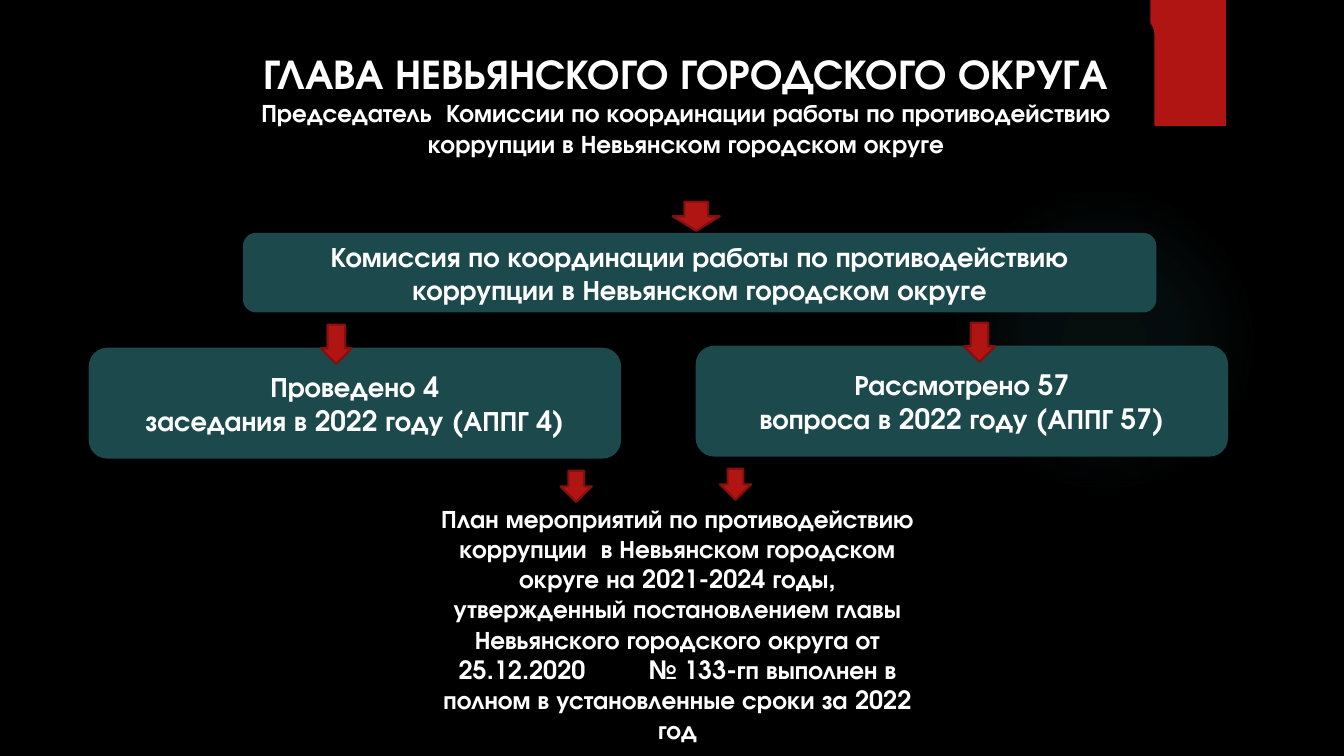
import pptx
import pptx.util
import pptx.dml.color
import pptx.enum.shapes
import pptx.enum.text
import pptx.oxml
import pptx.oxml.ns

Inches = pptx.util.Inches
Pt = pptx.util.Pt
Color = pptx.dml.color.RGBColor
KIND = pptx.enum.shapes.MSO_SHAPE

BLACK = Color(0x00, 0x00, 0x00)
WHITE = Color(0xFF, 0xFF, 0xFF)
TEAL = Color(0x1B, 0x49, 0x4C)
RED = Color(0xB0, 0x15, 0x13)
DARK = Color(0x82, 0x10, 0x0E)
GLOW = Color(0x50, 0xB9, 0xC1)
FONT = "TeX Gyre Adventor"


def add_form(slide, kind, box, fill, line=None):
    form = slide.shapes.add_shape(kind, *[Inches(n) for n in box])
    form.shadow.inherit = False
    form.fill.solid()
    form.fill.fore_color.rgb = fill
    if line is None:
        form.line.fill.background()
    else:
        form.line.color.rgb = line
        form.line.width = Pt(1.5)
    return form


def add_text(para, parts, size=20, color=WHITE, bold=True):
    """Text parts; a number stands for a space widened by that many points."""
    para.alignment = pptx.enum.text.PP_ALIGN.CENTER
    for part in parts:
        run = para.add_run()
        gap = not isinstance(part, str)
        run.text = " " if gap else part
        run.font.name = FONT
        run.font.size = Pt(size)
        run.font.bold = bold
        run.font.color.rgb = color
        if gap:
            run.font._element.set("spc", str(int(part * 100)))


def add_panel(slide, box, lines, fill=TEAL, sizes=(20, 20)):
    panel = add_form(slide, KIND.ROUNDED_RECTANGLE, box, fill)
    frame = panel.text_frame
    frame.word_wrap = True
    frame.vertical_anchor = pptx.enum.text.MSO_ANCHOR.MIDDLE
    for i, (parts, size) in enumerate(zip(lines, sizes)):
        para = frame.add_paragraph() if i else frame.paragraphs[0]
        add_text(para, parts, size=size)
    return panel


def add_glow(slide, box):
    glow = add_form(slide, KIND.OVAL, box, GLOW)
    stops = "".join(
        f'<a:gs pos="{pos}000"><a:srgbClr val="{GLOW}">'
        f'<a:alpha val="{alpha}000"/></a:srgbClr></a:gs>'
        for pos, alpha in ((0, 7), (36, 6), (69, 0)))
    grad = pptx.oxml.parse_xml(
        f'<a:gradFill {pptx.oxml.ns.nsdecls("a")}><a:gsLst>{stops}</a:gsLst>'
        '<a:path path="circle"><a:fillToRect l="50000" t="50000" '
        'r="50000" b="50000"/></a:path></a:gradFill>')
    props = glow._element.spPr
    props.replace(props.find(pptx.oxml.ns.qn("a:solidFill")), grad)


def add_arrow(slide, box):
    return add_form(slide, KIND.DOWN_ARROW, box, RED, DARK)


def add_decor(slide):
    add_glow(slide, (9.41, 1.83, 3.08, 3.08))
    add_form(slide, KIND.RECTANGLE, (11.41, 0, 0.75, 1.25), RED)


def add_head(slide, box):
    panel = add_panel(slide, box, [
        ["ГЛАВА НЕВЬЯНСКОГО ГОРОДСКОГО ОКРУГА"],
        ["Председатель", 5, "Комиссии по координации работы по "
         "противодействию коррупции в Невьянском городском округе"],
    ], fill=BLACK, sizes=(30, 18))
    panel.adjustments[0] = 0.11


def add_board(slide, box):
    left, top, width, height = box
    add_panel(slide, box, [[
        "Комиссия по координации работы по противодействию "
        "коррупции в Невьянском городском округе"]])
    add_arrow(slide, (left + 4.26, top - 0.31, 0.47, 0.29))


def add_result(slide, box, lines, shift):
    left, top, width, height = box
    add_panel(slide, box, [[line] for line in lines])
    arrow = add_arrow(slide, (left + shift, top - 0.23, 0.31, 0.39))
    arrow.adjustments[0] = 0.56


def add_plan(slide, box):
    left, top, width, height = box
    add_panel(slide, box, [[
        "План мероприятий по противодействию коррупции", 5,
        "в Невьянском городском округе на 2021-2024 годы, утвержденный "
        "постановлением главы Невьянского городского округа от 25.12.2020",
        40, "№ 133-гп выполнен в полном в установленные сроки за 2022 год"]],
        fill=BLACK, sizes=(18,))
    for shift, rise in ((1.42, 0.34), (3, 0.36)):
        add_arrow(slide, (left + shift, top - rise, 0.31, 0.31))


def main():
    deck = pptx.Presentation()
    deck.slide_width, deck.slide_height = Inches(13.33), Inches(7.5)
    slide = deck.slides.add_slide(deck.slide_layouts[6])
    slide.background.fill.solid()
    slide.background.fill.fore_color.rgb = BLACK

    # Backdrop and heading
    add_decor(slide)
    add_head(slide, (2.16, 0.16, 9.29, 1.72))

    # Commission and its results
    add_board(slide, (2.41, 2.31, 9.06, 0.79))
    add_result(slide, (0.88, 3.45, 5.28, 1.1),
               ("Проведено 4", "заседания в 2022 году (АППГ 4)"), 2.3)
    add_result(slide, (6.9, 3.43, 5.28, 1.1),
               ("Рассмотрено 57", "вопроса в 2022 году (АППГ 57)"), 2.66)

    # Action plan
    add_plan(slide, (4.14, 5.01, 5.16, 2.36))
    deck.save("out.pptx")


if __name__ == "__main__":
    main()
